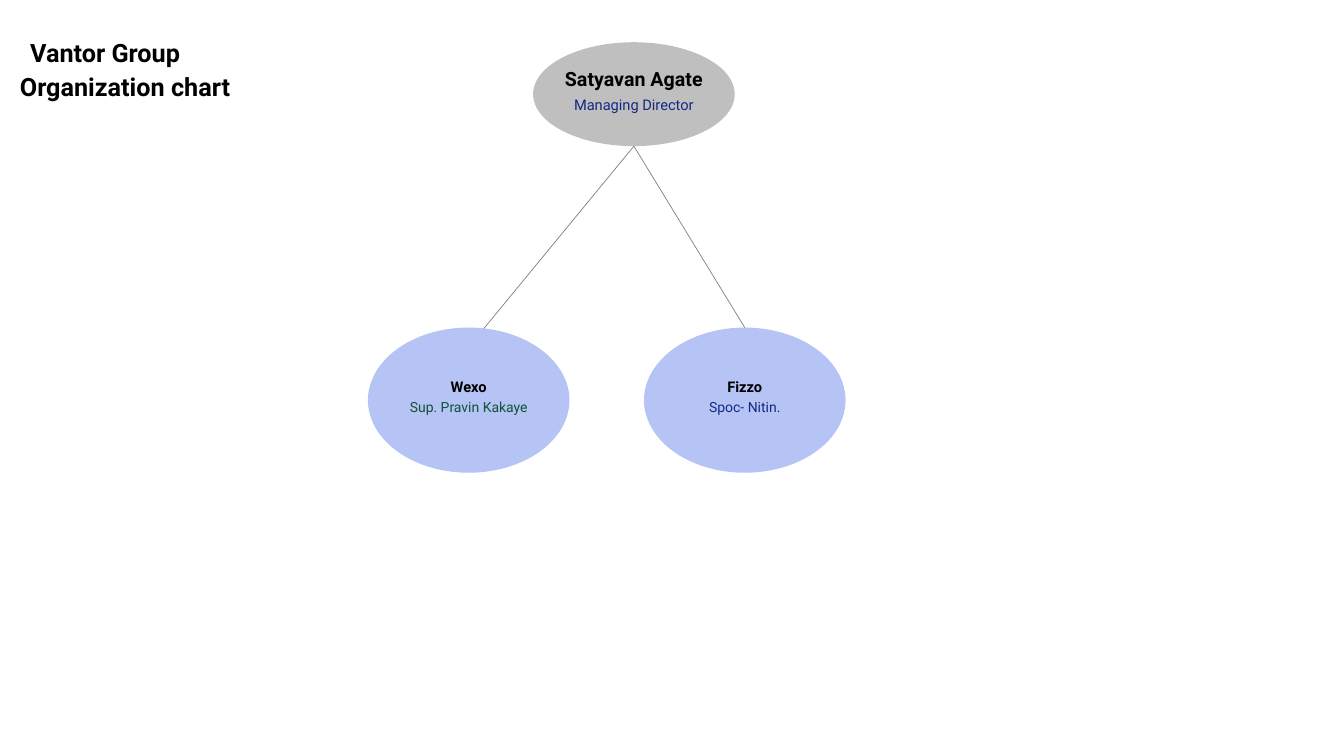
from dataclasses import dataclass

from pptx import Presentation
from pptx.dml.color import RGBColor
from pptx.enum.shapes import MSO_CONNECTOR, MSO_SHAPE
from pptx.enum.text import MSO_ANCHOR, MSO_AUTO_SIZE, PP_ALIGN
from pptx.oxml.ns import qn
from pptx.slide import Slide
from pptx.text.text import _Paragraph
from pptx.util import Pt

COLORS = {
    "black": "000000",
    "navy": "132A84",
    "green": "105239",
    "grey": "BFBFBF",
    "blue": "B6C3F5",
    "line": "808080",
}
FONT = "Roboto"
NODE_WIDTH = 144


@dataclass
class Heading:
    """A line of the slide heading held by a placeholder."""
    placeholder: int
    text: str
    left: float
    top: float
    margin_top: float
    line_spacing: float


@dataclass
class Node:
    """An ellipse with a bold name over a role."""
    name: str
    role: str
    left: float
    top: float
    height: float
    fill: str
    role_color: str
    name_size: float
    role_size: float


@dataclass
class Link:
    """A straight line from the director to a unit."""
    end_x: float
    end_y: float


HEADINGS = [
    Heading(0, "Vantor Group", 14.4, 23, 3.6, 1.0),
    Heading(1, "Organization chart", 7, 46.8, 6.5, 0.9),
]
DIRECTOR = Node("Satyavan Agate", "Managing Director", 380.8, 30.2, 74.2,
                "grey", "navy", 14, 10.5)
UNITS = [
    Node("Wexo", "Sup. Pravin Kakaye", 262.8, 234, 103.7,
         "blue", "green", 10.5, 10),
    Node("Fizzo", "Spoc- Nitin.", 460, 234, 103.7,
         "blue", "navy", 10.5, 10),
]
LINKS = [Link(345.6, 234.7), Link(532, 234)]


def add_span(para: _Paragraph, text: str, size: float, color: str, bold: bool) -> None:
    """Add one formatted run to a paragraph."""
    span = para.add_run()
    span.text = text
    span.font.name = FONT
    span.font.size = Pt(size)
    span.font.bold = bold
    span.font.color.rgb = RGBColor.from_string(COLORS[color])


def fill_heading(page: Slide, heading: Heading) -> None:
    """Move, format and fill a heading placeholder."""
    box = page.placeholders[heading.placeholder]
    box.left, box.top = Pt(heading.left), Pt(heading.top)
    box.width, box.height = Pt(280), Pt(28.8)
    frame = box.text_frame
    frame.auto_size = MSO_AUTO_SIZE.NONE
    frame.vertical_anchor = MSO_ANCHOR.TOP
    frame.word_wrap = True
    frame.margin_left = Pt(7.2)
    frame.margin_top = Pt(heading.margin_top)
    para = frame.paragraphs[0]
    properties = para._p.get_or_add_pPr()
    properties.set("marL", "0")
    properties.set("indent", "0")
    properties.append(properties.makeelement(qn("a:buNone"), {}))
    para.alignment = PP_ALIGN.LEFT
    para.space_before = Pt(0)
    para.line_spacing = heading.line_spacing
    add_span(para, heading.text, 18, "black", True)


def add_node(page: Slide, node: Node) -> None:
    """Draw an ellipse with its name and role."""
    box = page.shapes.add_shape(MSO_SHAPE.OVAL, Pt(node.left), Pt(node.top),
                                Pt(NODE_WIDTH), Pt(node.height))
    box.shadow.inherit = False
    box.fill.solid()
    box.fill.fore_color.rgb = RGBColor.from_string(COLORS[node.fill])
    box.line.fill.background()
    frame = box.text_frame
    frame.word_wrap = True
    frame.vertical_anchor = MSO_ANCHOR.MIDDLE
    frame.margin_left = frame.margin_right = frame.margin_top = Pt(0.7)
    frame.margin_bottom = Pt(4.3)
    rows = [
        (frame.paragraphs[0], node.name, node.name_size, "black", True),
        (frame.add_paragraph(), node.role, node.role_size, node.role_color, False),
    ]
    for para, text, size, color, bold in rows:
        para.alignment = PP_ALIGN.CENTER
        para.line_spacing = 0.9
        para.space_after = Pt(0.35 * size)
        add_span(para, text, size, color, bold)


def add_link(page: Slide, link: Link) -> None:
    """Draw a line from the bottom of the director to a unit."""
    line = page.shapes.add_connector(
        MSO_CONNECTOR.STRAIGHT,
        Pt(DIRECTOR.left + NODE_WIDTH / 2), Pt(DIRECTOR.top + DIRECTOR.height),
        Pt(link.end_x), Pt(link.end_y))
    line.line.width = Pt(0.5)
    line.line.color.rgb = RGBColor.from_string(COLORS["line"])
    properties = line._element.spPr
    properties.append(properties.makeelement(qn("a:effectLst"), {}))


def main() -> None:
    """Build and save the organization chart."""
    deck = Presentation()
    deck.slide_width, deck.slide_height = Pt(960), Pt(540)
    page = deck.slides.add_slide(deck.slide_layouts[1])
    for heading in HEADINGS:
        fill_heading(page, heading)
    for node in [DIRECTOR, *UNITS]:
        add_node(page, node)
    for link in LINKS:
        add_link(page, link)
    deck.save("out.pptx")


if __name__ == "__main__":
    main()
